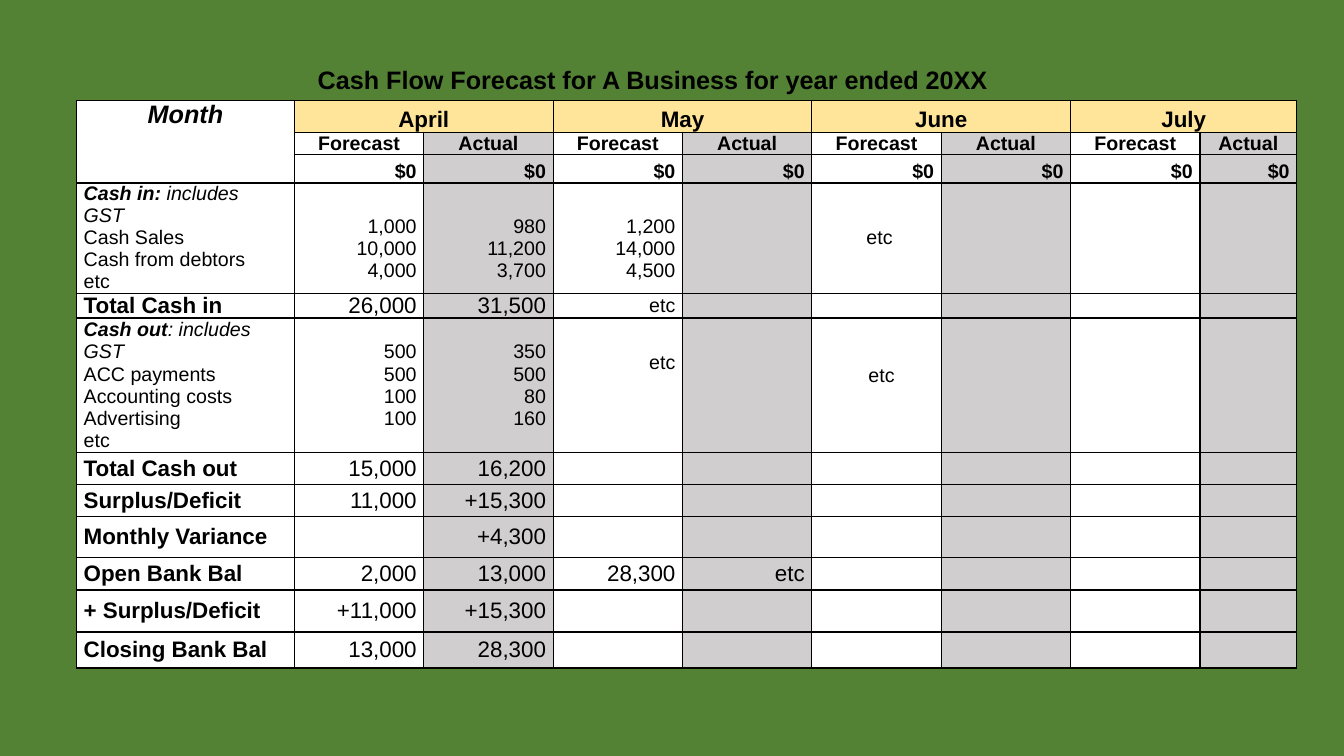
from dataclasses import dataclass
from lxml.etree import SubElement
from pptx import Presentation
from pptx.dml.color import RGBColor as RGB
from pptx.enum.text import MSO_ANCHOR as ANCHOR, PP_ALIGN as ALIGN
from pptx.oxml.ns import qn
from pptx.util import Cm, Pt

# Content
TITLE = "Cash Flow Forecast for A Business for year ended 20XX"
CORNER = "Month"
MONTHS = ["April", "May", "June", "July"]
KINDS = ["Forecast", "Actual"]
UNIT = "$0"

# Detail labels: lines of (text, style), b for bold and i for italic
CASH_IN = [[("Cash in:", "bi"), (" includes", "i")], [("GST", "i")],
           [("Cash Sales", "")], [("Cash from debtors", "")], [("etc", "")]]
CASH_OUT = [[("Cash out", "bi"), (": includes GST", "i")], [("ACC payments", "")],
            [("Accounting costs", "")], [("Advertising", "")], [("etc", "")]]

# Label, then the values of the leading columns
BODY = [
    (CASH_IN, ["1,000\n10,000\n4,000", "980\n11,200\n3,700",
               "1,200\n14,000\n4,500", "", "etc"]),
    ("Total Cash in", ["26,000", "31,500", "etc"]),
    (CASH_OUT, ["500\n500\n100\n100", "350\n500\n80\n160", "etc", "", "etc"]),
    ("Total Cash out", ["15,000", "16,200"]),
    ("Surplus/Deficit", ["11,000", "+15,300"]),
    ("Monthly Variance", ["", "+4,300"]),
    ("Open Bank Bal", ["2,000", "13,000", "28,300", "etc"]),
    ("+ Surplus/Deficit", ["+11,000", "+15,300"]),
    ("Closing Bank Bal", ["13,000", "28,300"]),
]

# Row and column sizes in cm
HEIGHTS = [0.79, 0.56, 0.72, 2.78, 0.62, 3.38, 0.81, 0.81, 1.04, 0.81, 1.06, 0.91]
WIDTHS = [5.49] + [3.26] * 7 + [2.44]
HEAD_ROWS = 3
TOTAL_IN_ROW = 4
HEAVY_BELOW = {2, 4, 11}
JUNE = 5
# Cell margins (left, top, bottom) in cm that shift the detail values
SIDE = 0.18
SHIFTS = {(3, 1): (SIDE, 0.55, 0), (3, 2): (SIDE, 0.55, 0), (3, 3): (SIDE, 0.55, 0),
          (3, JUNE): (0.33, 0, 0), (5, 3): (SIDE, 0, 1.12), (5, JUNE): (0.43, 0, 0.5)}


@dataclass(frozen=True)
class Theme:
    font: str = "Arial"
    ink: RGB = RGB(0, 0, 0)
    page: RGB = RGB(0x54, 0x82, 0x35)
    month: RGB = RGB(0xFF, 0xE5, 0x99)
    forecast: RGB = RGB(0xFF, 0xFF, 0xFF)
    actual: RGB = RGB(0xD0, 0xCE, 0xCE)
    title: int = 18
    total: int = 16
    detail: int = 14
    empty: int = 10
    line: float = 1
    heavy: float = 1.5


T = Theme()


def set_font(font, size, bold=False, italic=False):
    font.name, font.size, font.bold, font.italic = T.font, Pt(size), bold, italic
    font.color.rgb = T.ink


def write(cell, text, size, align=ALIGN.RIGHT, bold=False, italic=False, anchor=ANCHOR.MIDDLE):
    cell.vertical_anchor = anchor
    tf = cell.text_frame
    tf.text = text
    for p in tf.paragraphs:
        p.alignment = align
        set_font(p.font, size, bold, italic)


def write_detail(cell, lines):
    write(cell, "\n".join("" for _ in lines), T.detail, ALIGN.LEFT)
    for p, line in zip(cell.text_frame.paragraphs, lines):
        for text, style in line:
            r = p.add_run()
            r.text = text
            r.font.bold, r.font.italic = "b" in style, "i" in style


def add_borders(cell, row):
    pr = cell._tc.get_or_add_tcPr()
    top_heavy, bottom_heavy = row - 1 in HEAVY_BELOW, row in HEAVY_BELOW
    sides = [("lnL", False), ("lnR", False), ("lnT", top_heavy), ("lnB", bottom_heavy)]
    for i, (tag, heavy) in enumerate(sides):
        ln = SubElement(pr, qn(f"a:{tag}"), w=str(Pt(T.heavy if heavy else T.line)))
        SubElement(SubElement(ln, qn("a:solidFill")), qn("a:srgbClr"), val=str(T.ink))
        pr.insert(i, ln)


def style_cell(cell, row, col):
    left, top, bottom = SHIFTS.get((row, col), (SIDE, 0, 0))
    cell.margin_left, cell.margin_right = Cm(left), Cm(SIDE)
    cell.margin_top, cell.margin_bottom = Cm(top), Cm(bottom)
    cell.fill.solid()
    is_actual = col > 0 and col % 2 == 0
    fill = T.actual if is_actual else T.forecast
    cell.fill.fore_color.rgb = T.month if row == 0 and col else fill
    add_borders(cell, row)
    p = cell.text_frame.paragraphs[0]
    if not p.runs:
        SubElement(p._p, qn("a:endParaRPr"), sz=str(T.empty * 100))


def fill_header(table):
    table.cell(0, 0).merge(table.cell(HEAD_ROWS - 1, 0))
    write(table.cell(0, 0), CORNER, T.title, ALIGN.CENTER, True, True, ANCHOR.TOP)
    for m, month in enumerate(MONTHS):
        first = 1 + m * len(KINDS)
        table.cell(0, first).merge(table.cell(0, first + 1))
        write(table.cell(0, first), month, T.total, ALIGN.CENTER, True, anchor=ANCHOR.BOTTOM)
        for c, kind in enumerate(KINDS, first):
            write(table.cell(1, c), kind, T.detail, ALIGN.CENTER, True, anchor=ANCHOR.BOTTOM)
            write(table.cell(2, c), UNIT, T.detail, bold=True, anchor=ANCHOR.BOTTOM)


def fill_body(table):
    for row, (label, values) in enumerate(BODY, HEAD_ROWS):
        is_detail = isinstance(label, list)
        if is_detail:
            write_detail(table.cell(row, 0), label)
        else:
            write(table.cell(row, 0), label, T.total, ALIGN.LEFT, True)
        for col, value in enumerate(values, 1):
            if value:
                small = is_detail or (row == TOTAL_IN_ROW and value == "etc")
                align = ALIGN.CENTER if col == JUNE else ALIGN.RIGHT
                write(table.cell(row, col), value, T.detail if small else T.total, align)


def main():
    prs = Presentation()
    prs.slide_width, prs.slide_height = Cm(33.87), Cm(19.05)
    s = prs.slides.add_slide(prs.slide_layouts[5])
    s.background.fill.solid()
    s.background.fill.fore_color.rgb = T.page

    # Title
    title = s.shapes.title
    title.left, title.top, title.width, title.height = Cm(7.19), Cm(1.5), Cm(18.52), Cm(1.02)
    title.text_frame.text = TITLE
    p = title.text_frame.paragraphs[0]
    p.alignment = ALIGN.CENTER
    set_font(p.font, T.title, bold=True)

    # Forecast table
    table = s.shapes.add_table(len(HEIGHTS), len(WIDTHS), Cm(1.93), Cm(2.54),
                               Cm(sum(WIDTHS)), Cm(sum(HEIGHTS))).table
    table.first_row = table.horz_banding = False
    for column, width in zip(table.columns, WIDTHS):
        column.width = Cm(width)
    for table_row, height in zip(table.rows, HEIGHTS):
        table_row.height = Cm(height)
    fill_header(table)
    fill_body(table)
    for row in range(len(HEIGHTS)):
        for col in range(len(WIDTHS)):
            style_cell(table.cell(row, col), row, col)

    prs.save("out.pptx")


if __name__ == "__main__":
    main()
